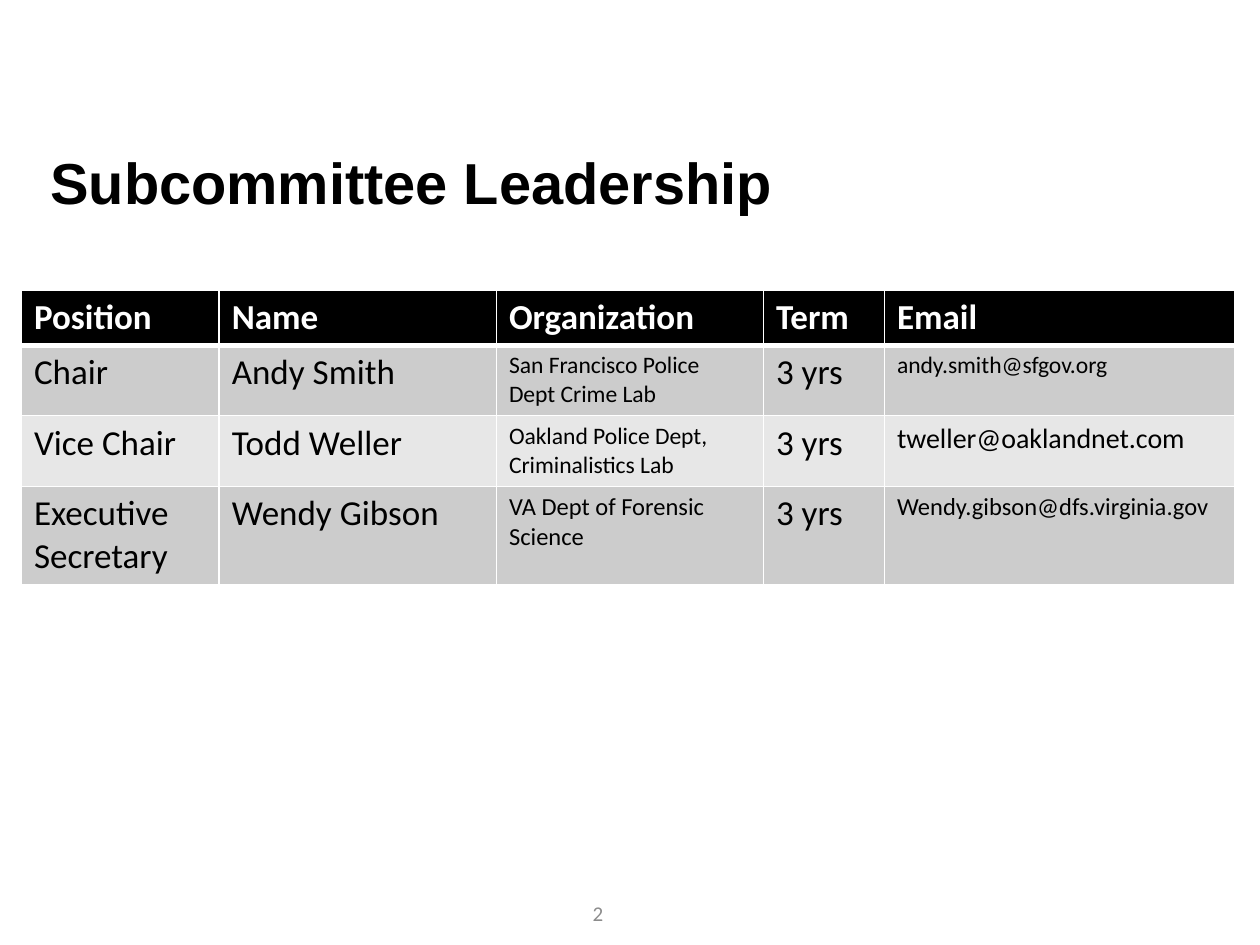
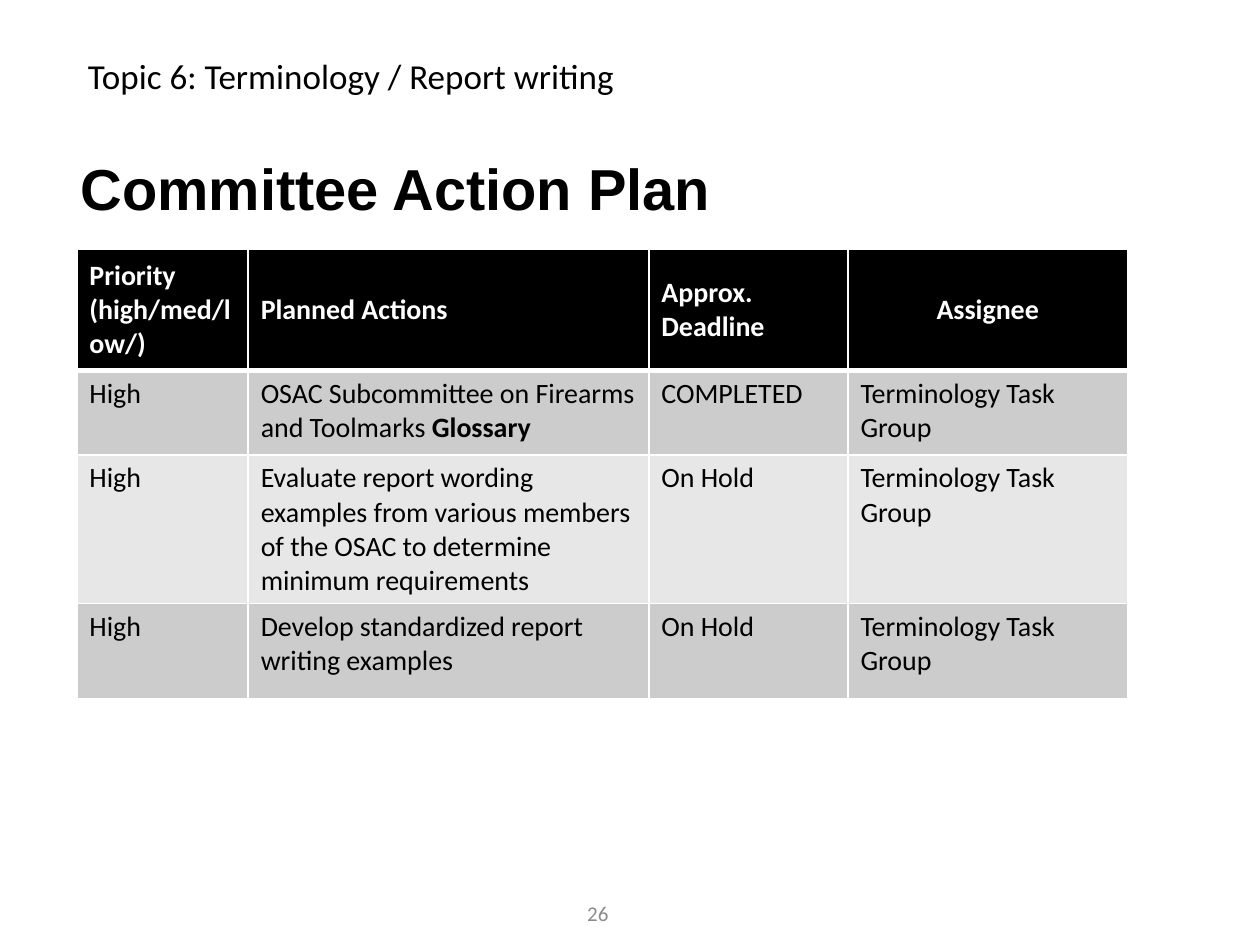
from lxml.etree import SubElement
from pptx import Presentation
from pptx.dml.color import RGBColor
from pptx.enum.text import MSO_ANCHOR as Anchor, MSO_AUTO_SIZE as AutoSize, PP_ALIGN as Align
from pptx.oxml.ns import qn
from pptx.util import Emu, Pt

PX = 9144  # 100 px to the inch
TITLE_ONLY = 5


def px(length):
    return Emu(length * PX)


def color(hex_string):
    return RGBColor.from_string(hex_string)


class Deck:
    BLACK, WHITE, GRAY = "000000", "FFFFFF", "8C8C8C"
    BANDS = "CCCCCC", "E7E7E7"
    HEADING_FONT, BODY_FONT = "Arial", "Calibri"

    def __init__(self):
        self.presentation = Presentation()
        self.presentation.slide_width = px(1000)
        self.presentation.slide_height = px(750)
        self.slide = None

    def add_slide(self, title, left, top, number):
        layout = self.presentation.slide_layouts[TITLE_ONLY]
        self.slide = self.presentation.slides.add_slide(layout)
        shape = self.slide.shapes.title
        self.place(shape, left, top, 862, 145)
        text_frame = shape.text_frame
        text_frame.text = title
        text_frame.auto_size = AutoSize.NONE
        text_frame.vertical_anchor = Anchor.MIDDLE
        paragraph = text_frame.paragraphs[0]
        paragraph.alignment = Align.LEFT
        paragraph.line_spacing = 0.9
        self.format_runs(paragraph, 33, self.BLACK, True, self.HEADING_FONT)
        self.add_text(str(number), 362, 705, 225, 40, 12, self.GRAY, Align.CENTER, Anchor.MIDDLE)

    def place(self, shape, left, top, width, height):
        shape.left, shape.top = px(left), px(top)
        shape.width, shape.height = px(width), px(height)

    def format_runs(self, paragraph, size, font_color, bold=False, font=BODY_FONT):
        for run in paragraph.runs:
            run.font.name = font
            run.font.size = Pt(size)
            run.font.bold = bold
            run.font.color.rgb = color(font_color)

    def add_text(self, text, left, top, width, height, size, font_color,
                 alignment=Align.LEFT, anchor=Anchor.TOP):
        shape = self.slide.shapes.add_textbox(px(left), px(top), px(width), px(height))
        text_frame = shape.text_frame
        text_frame.word_wrap = True
        text_frame.vertical_anchor = anchor
        text_frame.text = text
        paragraph = text_frame.paragraphs[0]
        paragraph.alignment = alignment
        self.format_runs(paragraph, size, font_color)

    def add_table(self, left, top, column_widths, row_heights, rows, size):
        """Draw rows whose cells are a text or a (text, size) pair; the first row is the header."""
        frame = self.slide.shapes.add_table(
            len(rows), len(column_widths), px(left), px(top),
            px(sum(column_widths)), px(sum(row_heights)))
        table = frame.table
        table.horz_banding = False
        for column, width in zip(table.columns, column_widths):
            column.width = px(width)
        for row, height in zip(table.rows, row_heights):
            row.height = px(height)
        for row_index, row in enumerate(rows):
            for column_index, content in enumerate(row):
                text, text_size = content if isinstance(content, tuple) else (content, size)
                self.fill_cell(table.cell(row_index, column_index), text, text_size, row_index)
        return table

    def fill_cell(self, cell, text, size, row_index):
        is_header = row_index == 0
        self.add_borders(cell, top=3 if row_index == 1 else 1, bottom=3 if is_header else 1)
        cell.fill.solid()
        cell.fill.fore_color.rgb = color(self.BLACK if is_header else self.BANDS[(row_index - 1) % 2])
        cell.text_frame.text = text
        self.format_runs(cell.text_frame.paragraphs[0], size,
                         self.WHITE if is_header else self.BLACK, is_header)

    def add_borders(self, cell, top, bottom):
        properties = cell._tc.get_or_add_tcPr()
        for side, width in (("L", 1), ("R", 1), ("T", top), ("B", bottom)):
            line = SubElement(properties, qn(f"a:ln{side}"), w=str(Pt(width)))
            fill = SubElement(line, qn("a:solidFill"))
            SubElement(fill, qn("a:srgbClr"), val=self.WHITE)

    def append_bold(self, cell, text, size):
        paragraph = cell.text_frame.paragraphs[0]
        run = paragraph.add_run()
        run.text = text
        self.format_runs(paragraph, size, self.BLACK)
        run.font.bold = True


def build_leadership(deck):
    deck.add_slide("Subcommittee Leadership", 30, 75, 2)
    deck.add_table(17, 230, [157, 220, 212, 96, 278], [44, 56, 56, 78], [
        ["Position", "Name", "Organization", "Term", "Email"],
        ["Chair", "Andy Smith", ("San Francisco Police Dept Crime Lab", 13.5), "3 yrs",
         ("andy.smith@sfgov.org", 13.5)],
        ["Vice Chair", "Todd Weller", ("Oakland Police Dept, Criminalistics Lab", 13.5), "3 yrs",
         ("tweller@oaklandnet.com", 16)],
        ["Executive Secretary", "Wendy Gibson", ("VA Dept of Forensic Science", 14), "3 yrs",
         ("Wendy.gibson@dfs.virginia.gov", 14)],
    ], 20)


def build_action_plan(deck):
    deck.add_slide("Committee Action Plan", 54, 80, 26)
    deck.add_text("Topic 6: Terminology / Report writing", 60, 38, 730, 44, 20, deck.BLACK)
    assignee = "Terminology Task Group"
    size = 16
    table = deck.add_table(61, 198, [136, 318, 158, 222], [96, 67, 118, 76], [
        ["Priority (high/med/low/)", "Planned Actions", "Approx. Deadline", "Assignee"],
        ["High", "OSAC Subcommittee on Firearms and Toolmarks ", "COMPLETED", assignee],
        ["High", "Evaluate report wording examples from various members of the OSAC "
                 "to determine minimum requirements", "On Hold", assignee],
        ["High", "Develop standardized report writing examples", "On Hold", assignee],
    ], size)
    header = table.rows[0].cells
    for cell in header:
        cell.vertical_anchor = Anchor.MIDDLE
    header[3].text_frame.paragraphs[0].alignment = Align.CENTER
    deck.append_bold(table.cell(1, 1), "Glossary", size)


def main():
    deck = Deck()
    build_leadership(deck)
    build_action_plan(deck)
    deck.presentation.save("out.pptx")


if __name__ == "__main__":
    main()
